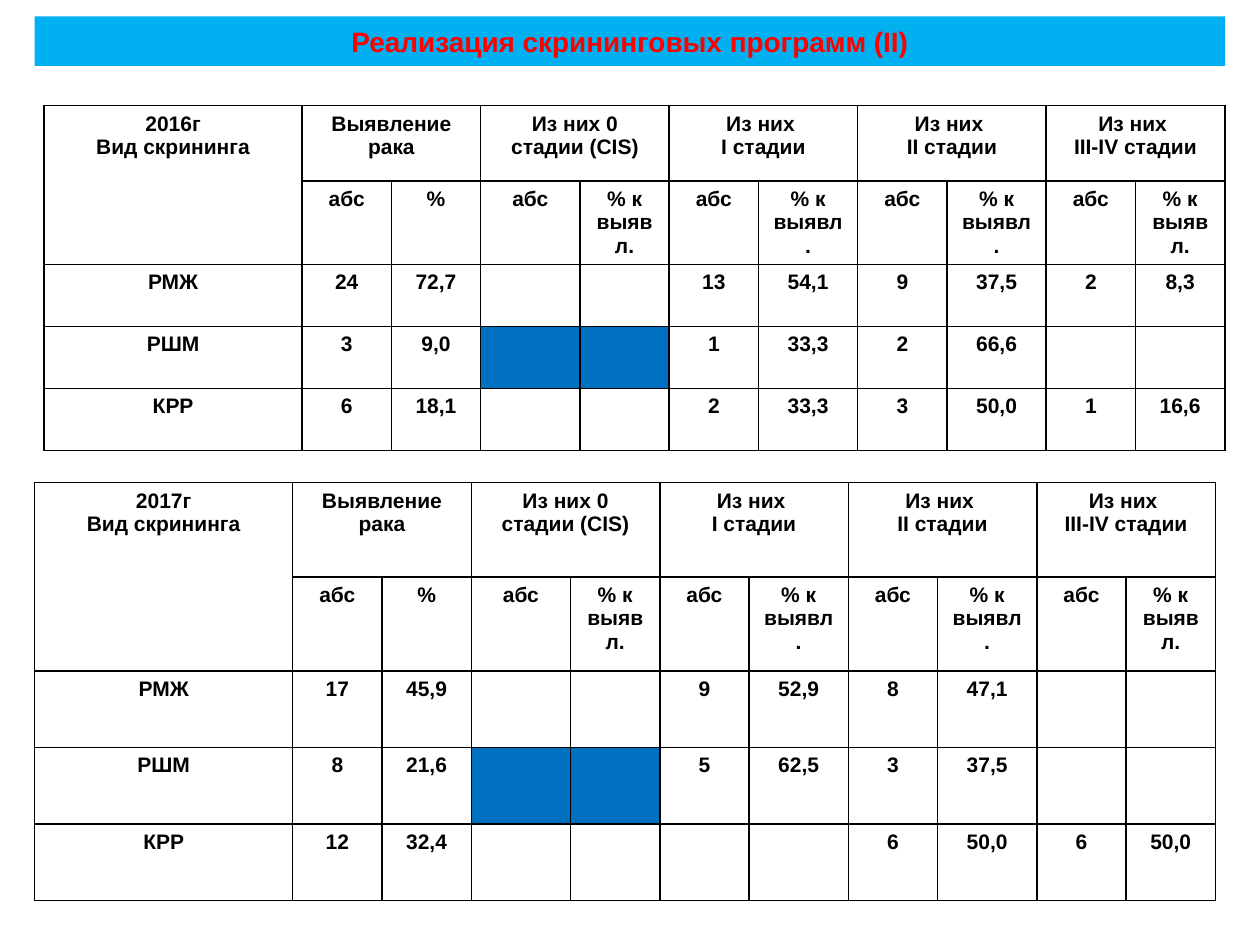
"""Build a slide with two yearly tables of cancer screening results."""
from dataclasses import dataclass

from lxml import etree
from pptx import Presentation
from pptx.dml.color import RGBColor
from pptx.enum.text import MSO_ANCHOR, PP_ALIGN
from pptx.oxml.ns import qn
from pptx.util import Cm, Pt

CENTER = PP_ALIGN.CENTER
MIDDLE = MSO_ANCHOR.MIDDLE
FONT = "Arial"
BLACK, RED, SKY, BLUE = "000000", "FF0000", "00B0F0", "0070C0"
NAME_WIDTH, COUNT_WIDTH, SHARE_WIDTH = 5.2, 1.8, 2.0
COLUMN_WIDTHS = [NAME_WIDTH, COUNT_WIDTH, COUNT_WIDTH, SHARE_WIDTH, COUNT_WIDTH,
                 COUNT_WIDTH, SHARE_WIDTH, COUNT_WIDTH, SHARE_WIDTH,
                 COUNT_WIDTH, COUNT_WIDTH]
GROUPS = ["Выявление рака", "Из них 0 стадии (CIS)", "Из них \nI стадии",
          "Из них \nII стадии", "Из них \nIII-IV стадии"]
MEASURES = ["абс", "%"] + ["абс", "% к выявл."] * 4
NOT_APPLICABLE = {(3, 3), (3, 4)}


@dataclass
class ScreeningYear:
    year: str
    left: float
    top: float
    header_height: float
    row_height: float
    results: list[list[str]]


YEARS = [
    ScreeningYear("2016г", 0.89, 2.13, 1.52, 1.25, [
        ["РМЖ", "24", "72,7", "", "", "13", "54,1", "9", "37,5", "2", "8,3"],
        ["РШМ", "3", "9,0", "", "", "1", "33,3", "2", "66,6", "", ""],
        ["КРР", "6", "18,1", "", "", "2", "33,3", "3", "50,0", "1", "16,6"],
    ]),
    ScreeningYear("2017г", 0.7, 9.73, 1.9, 1.54, [
        ["РМЖ", "17", "45,9", "", "", "9", "52,9", "8", "47,1", "", ""],
        ["РШМ", "8", "21,6", "", "", "5", "62,5", "3", "37,5", "", ""],
        ["КРР", "12", "32,4", "", "", "", "", "6", "50,0", "6", "50,0"],
    ]),
]


def color(value: str) -> RGBColor:
    """Turn a hex string into a colour."""
    return RGBColor.from_string(value)


def write(frame, text: str, size: float, ink: str) -> None:
    """Write bold centred paragraphs, one for each line of text."""
    for index, line in enumerate(text.split("\n")):
        paragraph = frame.add_paragraph() if index else frame.paragraphs[0]
        paragraph.alignment = CENTER
        if line:
            run = paragraph.add_run()
            run.text = line
            run.font.name = FONT
            run.font.size = Pt(size)
            run.font.bold = True
            run.font.color.rgb = color(ink)


def add_borders(cell) -> None:
    """Draw a thin black line on all four sides of a cell."""
    properties = cell._tc.get_or_add_tcPr()
    for side in ("a:lnL", "a:lnR", "a:lnT", "a:lnB"):
        line = etree.SubElement(properties, qn(side), w=str(Pt(1)))
        fill = etree.SubElement(line, qn("a:solidFill"))
        etree.SubElement(fill, qn("a:srgbClr"), val=BLACK)


def add_title(slide, text: str) -> None:
    """Place the title as a coloured band."""
    title = slide.shapes.title
    title.left, title.top, title.width, title.height = Cm(0.7), Cm(0.33), Cm(24), Cm(1)
    title.fill.solid()
    title.fill.fore_color.rgb = color(SKY)
    title.text_frame.vertical_anchor = MIDDLE
    write(title.text_frame, text, 16, RED)


def add_results(slide, screening: ScreeningYear) -> None:
    """Draw the table of one screening year."""
    group_cells = [cell for group in GROUPS for cell in (group, "")]
    content = [[f"{screening.year}\nВид скрининга", *group_cells],
               ["", *MEASURES], *screening.results]
    heights = [screening.header_height] * 2 + [screening.row_height] * len(screening.results)
    table = slide.shapes.add_table(
        len(content), len(COLUMN_WIDTHS), Cm(screening.left), Cm(screening.top),
        Cm(sum(COLUMN_WIDTHS)), Cm(sum(heights))).table
    table.first_row = table.horz_banding = False
    for column, width in zip(table.columns, COLUMN_WIDTHS):
        column.width = Cm(width)
    for row, height in zip(table.rows, heights):
        row.height = Cm(height)
    table.cell(0, 0).merge(table.cell(1, 0))
    for start in range(1, len(COLUMN_WIDTHS), 2):
        table.cell(0, start).merge(table.cell(0, start + 1))
    for row_index, row in enumerate(content):
        for column_index, text in enumerate(row):
            cell = table.cell(row_index, column_index)
            add_borders(cell)
            if (row_index, column_index) in NOT_APPLICABLE:
                cell.fill.solid()
                cell.fill.fore_color.rgb = color(BLUE)
            else:
                cell.fill.background()
            write(cell.text_frame, text, 12, BLACK)


def main() -> None:
    """Build and save the presentation."""
    presentation = Presentation()
    presentation.slide_width, presentation.slide_height = Cm(25.4), Cm(19.05)
    slide = presentation.slides.add_slide(presentation.slide_layouts[5])
    add_title(slide, "Реализация скрининговых программ (II)")
    for screening in YEARS:
        add_results(slide, screening)
    presentation.save("out.pptx")


if __name__ == "__main__":
    main()
